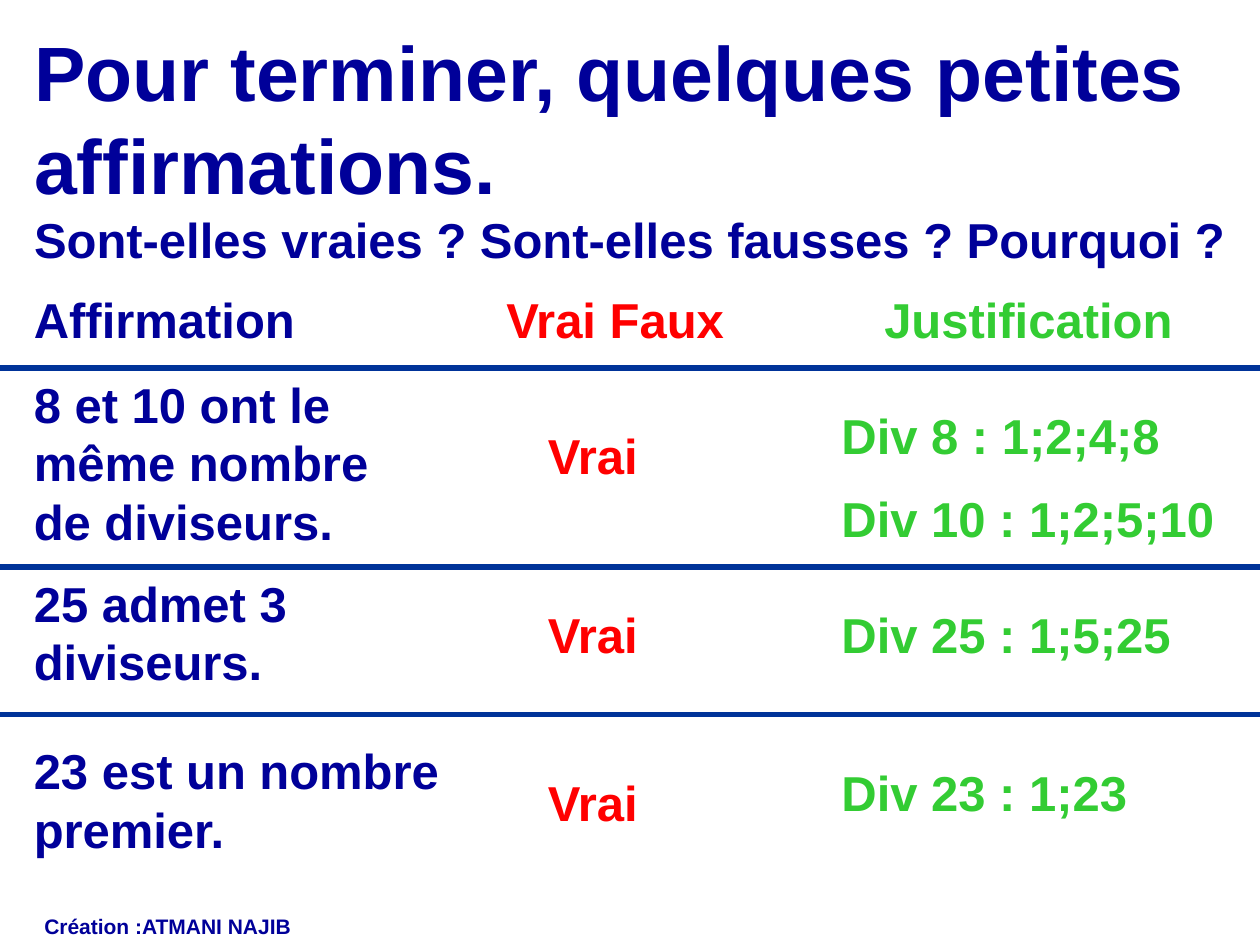
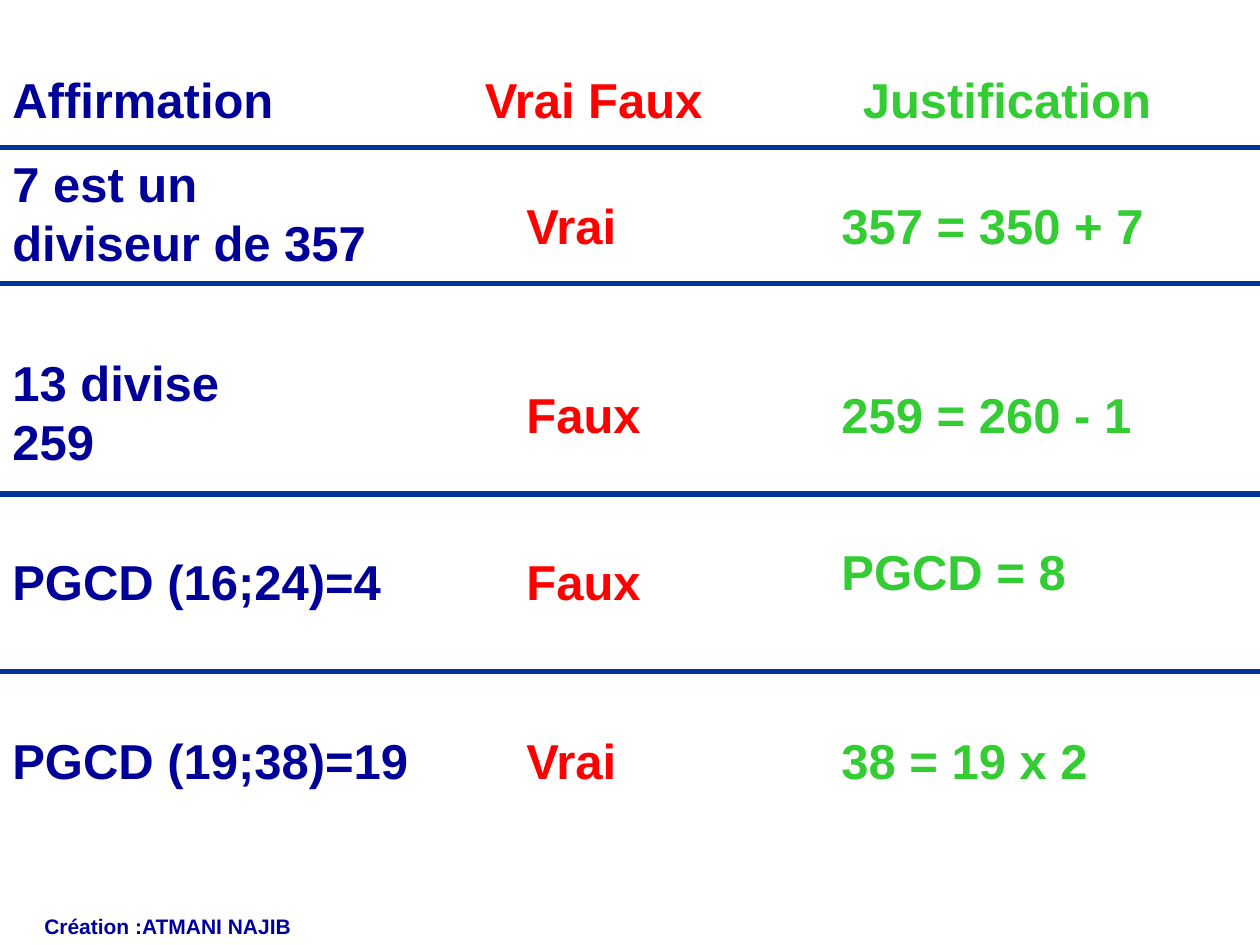
from lxml.etree import SubElement
from pptx import Presentation
from pptx.dml.color import RGBColor
from pptx.enum.shapes import MSO_CONNECTOR
from pptx.enum.text import MSO_ANCHOR, MSO_AUTO_SIZE, PP_ALIGN
from pptx.oxml.ns import qn
from pptx.util import Inches, Pt

NAVY, RED, GREEN, RULE = "000099", "FF0000", "33CC33", "003399"
FONT = "Arial"
BODY_SIZE = 28
WIDTH, HEIGHT = 10, 7.5
LINE_HEIGHT = 0.57
JUSTIFICATION_LEFT = 6.58
TITLE_LAYOUT, BLANK_LAYOUT = 5, 6


def colour(value):
    """Turn a hex string into a colour."""
    return RGBColor.from_string(value)


def write(frame, lines, ink, align=PP_ALIGN.LEFT, gap=0):
    """Fill a frame with (text, size) lines, one paragraph each."""
    for index, (text, size) in enumerate(lines):
        para = frame.add_paragraph() if index else frame.paragraphs[0]
        para.alignment = align
        para.space_before = Pt(gap if index else 0)
        span = para.add_run()
        span.text = text
        span.font.name = FONT
        span.font.size = Pt(size)
        span.font.bold = True
        span.font.color.rgb = colour(ink)


def add_text(page, place, lines, ink, wrap=True, **style):
    """Add a text box at (left, top, width, height)."""
    box = page.shapes.add_textbox(*map(Inches, place))
    box.text_frame.word_wrap = wrap
    write(box.text_frame, lines, ink, **style)


def add_title(page, place, lines):
    """Move the title placeholder and write the opening question."""
    box = page.shapes.title
    box.left, box.top, box.width, box.height = map(Inches, place)
    box.text_frame.word_wrap = True
    box.text_frame.auto_size = MSO_AUTO_SIZE.NONE
    box.text_frame.vertical_anchor = MSO_ANCHOR.MIDDLE
    write(box.text_frame, lines, NAVY)


def add_rule(page, top):
    """Draw a separator across the whole page."""
    rule = page.shapes.add_connector(
        MSO_CONNECTOR.STRAIGHT, Inches(WIDTH), Inches(top), 0, Inches(top))
    rule.line.color.rgb = colour(RULE)
    rule.line.width = Pt(3)
    SubElement(rule._element.spPr, qn("a:effectLst"))


def add_headings(page, left, top):
    """Write the three column headings from a left edge."""
    headings = [("Affirmation", 0, 2.28, NAVY),
                ("Vrai Faux", 3.75, 1.95, RED),
                ("Justification", 6.75, 2.5, GREEN)]
    for text, offset, width, ink in headings:
        add_text(page, (left + offset, top, width, LINE_HEIGHT),
                 [(text, BODY_SIZE)], ink, wrap=False)


def add_statement(page, left, claim, verdict, reasons):
    """Write a claim, its verdict and its justification in one row."""
    text, top, width = claim
    add_text(page, (left, top, width, LINE_HEIGHT), [(text, BODY_SIZE)], NAVY)
    text, top = verdict
    add_text(page, (left + 4.08, top, 1.11, LINE_HEIGHT),
             [(text, BODY_SIZE)], RED, wrap=False)
    texts, top = reasons
    add_text(page, (JUSTIFICATION_LEFT, top, 3.25, LINE_HEIGHT),
             [(text, BODY_SIZE) for text in texts], GREEN, gap=14)


def add_footer(page):
    """Sign the page at the bottom left."""
    add_text(page, (-0.12, HEIGHT - 0.3, 2.53, 0.3),
             [("Création :ATMANI NAJIB", 12)], NAVY, align=PP_ALIGN.RIGHT)


def add_quiz(page, left, top, rules, statements):
    """Lay out headings, separators and statements on a page."""
    add_headings(page, left, top)
    for statement in statements:
        add_statement(page, left, *statement)
    for rule_top in rules:
        add_rule(page, rule_top)
    add_footer(page)


def build_opening(deck):
    """Build the page that asks the question and starts the quiz."""
    page = deck.slides.add_slide(deck.slide_layouts[TITLE_LAYOUT])
    add_title(page, (0.17, 0, 9.83, 2.33), [
        ("Pour terminer, quelques petites affirmations.", 44),
        ("Sont-elles vraies ? Sont-elles fausses ? Pourquoi ?", BODY_SIZE)])
    add_quiz(page, 0.17, 2.25, (2.92, 4.5, 5.67), [
        (("8 et 10 ont le même nombre de diviseurs.", 2.92, 3),
         ("Vrai", 3.33), (["Div 8 : 1;2;4;8", "Div 10 : 1;2;5;10"], 3.17)),
        (("25 admet 3 diviseurs.", 4.5, 2.42),
         ("Vrai", 4.75), (["Div 25 : 1;5;25"], 4.75)),
        (("23 est un nombre premier.", 5.83, 3.67),
         ("Vrai", 6.08), (["Div 23 : 1;23"], 6))])


def build_continuation(deck):
    """Build the page that continues the quiz."""
    page = deck.slides.add_slide(deck.slide_layouts[BLANK_LAYOUT])
    add_quiz(page, 0, 0.5, (1.17, 2.25, 3.92, 5.33), [
        (("7 est un diviseur de 357", 1.17, 3.17),
         ("Vrai", 1.5), (["357 = 350 + 7"], 1.5)),
        (("13 divise 259", 2.75, 2.42),
         ("Faux", 3), (["259 = 260 - 1"], 3)),
        (("PGCD (16;24)=4", 4.33, 3.67),
         ("Faux", 4.33), (["PGCD = 8"], 4.25)),
        (("PGCD (19;38)=19", 5.75, 3.67),
         ("Vrai", 5.75), (["38 = 19 x 2"], 5.75))])


def main():
    """Build the deck and save it."""
    deck = Presentation()
    deck.slide_width, deck.slide_height = Inches(WIDTH), Inches(HEIGHT)
    build_opening(deck)
    build_continuation(deck)
    deck.save("out.pptx")


if __name__ == "__main__":
    main()
